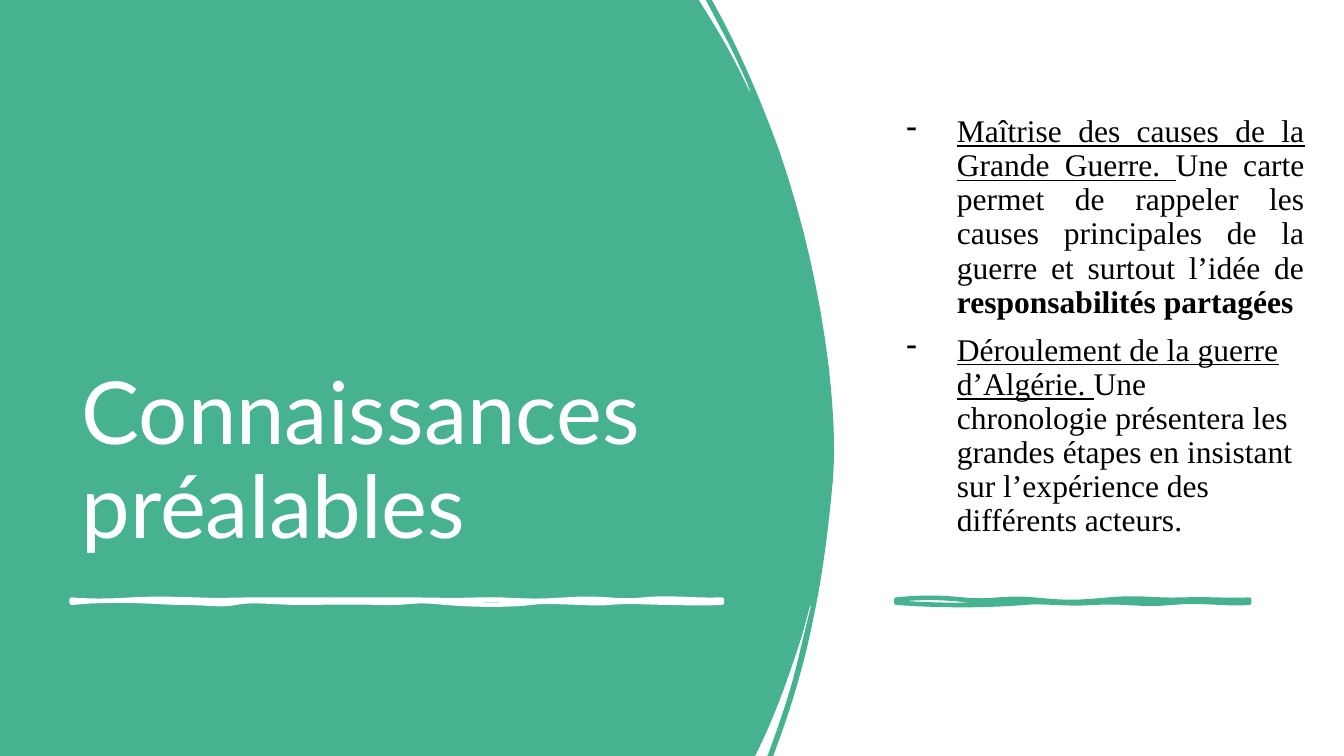
from lxml import etree
from pptx import Presentation
from pptx.dml.color import RGBColor
from pptx.enum.shapes import MSO_SHAPE
from pptx.enum.text import MSO_ANCHOR, MSO_AUTO_SIZE, PP_ALIGN
from pptx.oxml.ns import qn
from pptx.util import Inches, Pt

RECT = MSO_SHAPE.RECTANGLE
BOTTOM = MSO_ANCHOR.BOTTOM
NO_FIT = MSO_AUTO_SIZE.NONE
LEFT, JUST = PP_ALIGN.LEFT, PP_ALIGN.JUSTIFY

WIDE, HIGH = 13.33, 7.5
LEFT_COL, RIGHT_COL = 0.71, 8.89
STEPS = 8  # points per curve
HEX = {"green": "46B290", "white": "FFFFFF", "black": "000000"}

# Outlines in inches: a pair is a corner, six numbers are a Bézier curve
PANEL = [
    (0, 0), (6.93, 0), (7.03, 0.16),
    (7.18, 0.4, 7.31, 0.64, 7.43, 0.9), (7.45, 0.93),
    (7.44, 0.9, 7.42, 0.86, 7.41, 0.82),
    (7.34, 0.67, 7.27, 0.51, 7.19, 0.36),
    (7, 0), (7.06, 0), (7.18, 0.22),
    (7.39, 0.63, 7.57, 1.06, 7.73, 1.5),
    (7.97, 2.2, 8.13, 2.91, 8.22, 3.64),
    (8.26, 4.02, 8.29, 4.39, 8.26, 4.77),
    (8.22, 5.2, 8.17, 5.64, 8.08, 6.07),
    (7.99, 6.55, 7.85, 7.02, 7.68, 7.47),
    (7.67, 7.5), (7.61, 7.5), (7.62, 7.48),
    (7.71, 7.23, 7.8, 6.98, 7.87, 6.72),
    (7.93, 6.49, 7.98, 6.26, 8.04, 6.03), (8.04, 5.99),
    (8, 6.13, 7.97, 6.26, 7.93, 6.38),
    (7.83, 6.69, 7.72, 7, 7.59, 7.29),
    (7.49, 7.5), (0, 7.5),
]
TITLE_RULE = [
    (LEFT_COL, 5.95),
    (0.97, 5.97, 1.14, 5.96, 1.3, 5.95), (1.46, 5.94, 1.69, 5.94, 1.95, 5.95),
    (2.21, 5.96, 2.29, 5.95, 2.54, 5.95), (4.04, 5.95),
    (4.34, 5.95, 4.44, 5.96, 4.75, 5.95), (5.07, 5.94, 5.18, 5.98, 5.6, 5.95),
    (6.02, 5.92, 6.1, 5.98, 6.38, 5.95), (6.66, 5.92, 6.83, 5.96, 7.16, 5.95),
    (7.16, 5.98),
    (6.93, 5.99, 6.75, 5.98, 6.64, 5.98), (6.53, 5.98, 6.19, 5.96, 6.05, 5.98),
    (5.91, 6, 5.43, 5.95, 5.27, 5.98), (5.11, 6, 4.78, 6.01, 4.42, 5.98),
    (4.07, 5.94, 4.09, 5.99, 3.77, 5.98), (3.45, 5.97, 3.22, 5.98, 2.93, 5.98),
    (2.63, 5.97, 2.49, 5.95, 2.34, 5.98), (2.18, 6.01, 2.07, 5.98, 1.82, 5.98),
    (1.56, 5.98, 1.2, 5.93, LEFT_COL, 5.98),
]
LIST_RULE = [
    (RIGHT_COL, 5.95),
    (9.08, 5.93, 9.27, 5.92, 9.55, 5.95), (9.84, 5.98, 9.94, 5.92, 10.26, 5.95),
    (10.57, 5.98, 10.67, 5.98, 10.99, 5.95), (11.31, 5.92, 11.45, 5.96, 11.72, 5.95),
    (12, 5.94, 12.16, 5.96, 12.39, 5.95), (12.39, 5.98),
    (12.16, 6, 11.93, 5.95, 11.62, 5.98), (11.31, 6.01, 11.16, 5.96, 10.85, 5.98),
    (10.54, 6, 10.37, 5.96, 10.15, 5.98), (9.93, 6, 9.45, 6.02, RIGHT_COL, 5.98),
]
# Each item: alignment, then runs of text and format
ITEMS = [
    (JUST, [
        ("Maîtrise des causes de la Grande Guerre. ", {"underline": True}),
        ("Une carte permet de rappeler les causes principales de la guerre "
         "et surtout l’idée de ", {}),
        ("responsabilités partagées", {"bold": True}),
    ]),
    (LEFT, [
        ("Déroulement de la guerre d’Algérie. ", {"underline": True}),
        ("Une chronologie présentera les grandes étapes en insistant "
         "sur l’expérience des différents acteurs.", {}),
    ]),
]


def apply(obj, form):
    for key, val in form.items():
        setattr(obj, key, val)


def color(name):
    return RGBColor.from_string(HEX[name])


def paint(shape, name, width=0):
    shape.shadow.inherit = False
    shape.fill.solid()
    shape.fill.fore_color.rgb = color(name)
    if width:
        shape.line.color.rgb = color(name)
        shape.line.width = Pt(width)
    else:
        shape.line.fill.background()


def trace(parts):
    """Turn corners and curves into a list of points in EMU."""
    dots = []
    for part in parts:
        if len(part) == 2:
            dots.append(part)
            continue
        ends = [dots[-1], part[:2], part[2:4], part[4:]]
        for i in range(1, STEPS + 1):
            t = i / STEPS
            share = ((1 - t) ** 3, 3 * t * (1 - t) ** 2, 3 * t * t * (1 - t), t ** 3)
            dots.append(tuple(sum(s * e[k] for s, e in zip(share, ends)) for k in (0, 1)))
    return [(Inches(x), Inches(y)) for x, y in dots]


def draw(slide, parts, name, width=0):
    dots = trace(parts)
    pen = slide.shapes.build_freeform(*dots[0])
    pen.add_line_segments(dots[1:], close=True)
    shape = pen.convert_to_shape()
    paint(shape, name, width)
    return shape


def brush(slide, parts, name):
    """Draw a hand-drawn rule: only its outline is inked."""
    shape = draw(slide, parts, name, 3.25)
    shape._element.find(".//" + qn("a:path")).set("fill", "none")


def place(slide, holder, box):
    """Put a placeholder in its box, in front of the shapes so far."""
    slide.shapes._spTree.append(holder._element)
    apply(holder, dict(zip(("left", "top", "width", "height"), map(Inches, box))))
    frame = holder.text_frame
    apply(frame, {"word_wrap": True, "auto_size": NO_FIT, "vertical_anchor": BOTTOM})
    return frame


def write(para, runs, face, size, name):
    for text, form in runs:
        run = para.add_run()
        run.text = text
        apply(run.font, {"name": face, "size": Pt(size), **form})
        run.font.color.rgb = color(name)


def dash(para):
    props = para._p.get_or_add_pPr()
    props.set("marL", str(Inches(0.5)))
    props.set("indent", str(-Inches(0.5)))
    etree.SubElement(props, qn("a:buFontTx"))
    etree.SubElement(props, qn("a:buChar")).set("char", "-")


def main():
    deck = Presentation()
    apply(deck, {"slide_width": Inches(WIDE), "slide_height": Inches(HIGH)})
    slide = deck.slides.add_slide(deck.slide_layouts[0])
    title, body = slide.placeholders

    # Backdrop and green panel
    back = slide.shapes.add_shape(RECT, 0, 0, Inches(WIDE), Inches(HIGH))
    paint(back, "white")
    draw(slide, PANEL, "green")

    # Title
    para = place(slide, title, (LEFT_COL, 1.42, 6.45, 4.16)).paragraphs[0]
    apply(para, {"alignment": LEFT, "line_spacing": 0.9})
    write(para, [("Connaissances préalables", {})], "Lato", 62, "white")

    # Dashed list
    frame = place(slide, body, (RIGHT_COL, 0.31, 4.15, 5.08))
    for i, (align, runs) in enumerate(ITEMS):
        para = frame.add_paragraph() if i else frame.paragraphs[0]
        apply(para, {"alignment": align, "line_spacing": 0.9, "space_before": Pt(10)})
        dash(para)
        write(para, runs, "Times New Roman", 22.5, "black")

    # Hand-drawn rules
    brush(slide, TITLE_RULE, "white")
    brush(slide, LIST_RULE, "green")

    deck.save("out.pptx")


if __name__ == "__main__":
    main()
